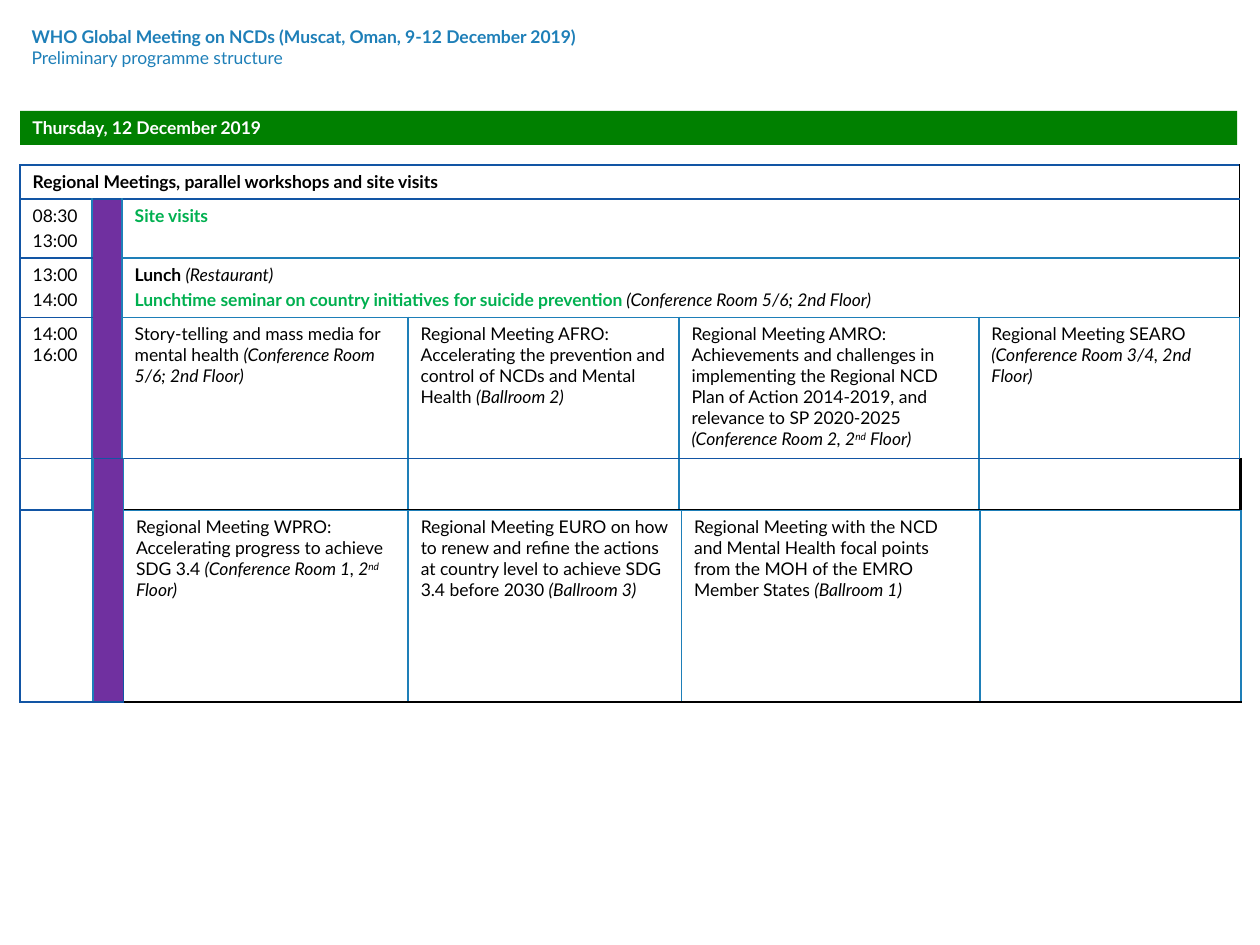
from lxml import etree
from pptx import Presentation
from pptx.dml.color import RGBColor
from pptx.enum.shapes import MSO_SHAPE
from pptx.enum.text import MSO_ANCHOR, MSO_AUTO_SIZE, PP_ALIGN
from pptx.oxml.ns import qn
from pptx.util import Inches, Pt

RECTANGLE = MSO_SHAPE.RECTANGLE
TOP, MIDDLE = MSO_ANCHOR.TOP, MSO_ANCHOR.MIDDLE
LEFT = PP_ALIGN.LEFT
NO_AUTOFIT = MSO_AUTO_SIZE.NONE
FONT, SIZE = "Lato", 10
BLUE, NAVY, BLACK, WHITE = "1E7FB8", "1255A4", "000000", "FFFFFF"
BANNER_GREEN, TEXT_GREEN, PURPLE = "008000", "00B050", "7030A0"
PLAIN_STYLE = "{2D5ABB26-0587-4C30-8999-92F81FD0307C}"

# Content: a paragraph is a list of (text, style) spans
# Styles: b bold, i italic, g green, s superscript
HEADING = [
    [("WHO Global Meeting on NCDs (Muscat, Oman, 9-12 December 2019)", "b")],
    [("Preliminary programme structure", "")],
]
BANNER = [[("Thursday, 12 December 2019", "b")]]


def session(topic, *room):
    return [[(topic, "")] + [(text, "is" if text == "nd" else "i") for text in room]]


def hours(*times):
    return [[(time, "")] for time in times]


# Cells: row, column, row span, column span, borders, paragraphs, fill
# Borders run left, top, right, bottom: N navy, B blue, K black, - none
MORNING = {
    "at": (0.16, 1.31),
    "columns": [0.57, 0.24, 2.27, 2.15, 2.38, 2.07],
    "rows": [0.27, 0.47, 0.47, 1.12, 0.41],
    "cells": [
        (0, 0, 1, 6, "NNKN",
         [[("Regional Meetings, parallel workshops and site visits", "b")]], None),
        (1, 0, 1, 1, "NNBN", hours("08:30", "13:00"), None),
        (1, 1, 4, 1, "BNBN", [], PURPLE),
        (1, 2, 1, 4, "BNKB", [[("Site visits", "bg")]], None),
        (2, 0, 1, 1, "NNBN", hours("13:00", "14:00"), None),
        (2, 2, 1, 4, "BBKB", [
            [("Lunch ", "b"), ("(Restaurant)", "i")],
            [("Lunchtime seminar on country initiatives for suicide prevention ", "bg"),
             ("(Conference Room 5/6; 2nd Floor)", "i")],
        ], None),
        (3, 0, 2, 1, "NNBN", hours("14:00 16:00"), None),
        (3, 2, 1, 1, "BBB-", session(
            "Story-telling and mass media for mental health ",
            "(Conference Room 5/6; 2nd Floor)"), None),
        (3, 3, 1, 1, "BBB-", session(
            "Regional Meeting AFRO: Accelerating the prevention and control of "
            "NCDs and Mental Health ", "(Ballroom 2)"), None),
        (3, 4, 1, 1, "BBB-", session(
            "Regional Meeting AMRO: Achievements and challenges in implementing "
            "the Regional NCD Plan of Action 2014-2019, and relevance to "
            "SP 2020-2025 ", "(Conference Room 2, 2", "nd", " Floor)"), None),
        (3, 5, 1, 1, "BBB-", session(
            "Regional Meeting SEARO ", "(Conference Room 3/4, 2nd Floor)"), None),
        (4, 2, 1, 1, "N-BK", [], None),
        (4, 3, 1, 1, "B-BK", [], None),
        (4, 4, 1, 1, "B-BK", [], None),
        (4, 5, 1, 1, "B-KK", [], None),
    ],
}
AFTERNOON = {
    "at": (0.16, 3.64),
    "columns": [0.58, 0.24, 2.26, 2.17, 2.37, 2.07],
    "rows": [0.41, 1.11, 0.41],
    "cells": [
        (0, 0, 3, 1, "NNBN", [], None),
        (0, 1, 3, 1, "BNBN", [], PURPLE),
        (0, 2, 1, 4, "BNKB", [], None),
        (1, 2, 1, 1, "BBB-", session(
            "Regional Meeting WPRO: Accelerating progress to achieve SDG 3.4 ",
            "(Conference Room 1, 2", "nd", " Floor)"), None),
        (1, 3, 1, 1, "BBB-", session(
            "Regional Meeting EURO on how to renew and refine the actions at "
            "country level to achieve SDG 3.4 before 2030 ", "(Ballroom 3)"), None),
        (1, 4, 1, 1, "BBB-", session(
            "Regional Meeting with the NCD and Mental Health focal points from "
            "the MOH of the EMRO Member States ", "(Ballroom 1)"), None),
        (1, 5, 2, 1, "BBBK", [], None),
        (2, 2, 1, 1, "N-BK", [], None),
        (2, 3, 1, 1, "B-BK", [], None),
        (2, 4, 1, 1, "B-BK", [], None),
    ],
}
BORDER_COLOURS = {"N": NAVY, "B": BLUE, "K": BLACK}


def colour(hex_string):
    return RGBColor.from_string(hex_string)


def write(frame, paragraphs, ink=BLACK, gap=0):
    frame.word_wrap = True
    for index, spans in enumerate(paragraphs):
        para = frame.paragraphs[0] if index == 0 else frame.add_paragraph()
        para.alignment = LEFT
        para.space_before = Pt(gap if index else 0)
        for text, style in spans:
            span = para.add_run()
            span.text = text
            span.font.name, span.font.size = FONT, Pt(SIZE)
            span.font.bold, span.font.italic = "b" in style, "i" in style
            span.font.color.rgb = colour(TEXT_GREEN if "g" in style else ink)
            if "s" in style:
                span.font._element.set("baseline", "30000")


def set_borders(cell, borders):
    properties = cell._tc.get_or_add_tcPr()
    # The schema wants left, right, top, bottom
    for tag, position in (("lnL", 0), ("lnR", 2), ("lnT", 1), ("lnB", 3)):
        line = etree.SubElement(properties, qn("a:" + tag), w=str(Pt(1)))
        hex_string = BORDER_COLOURS.get(borders[position])
        if hex_string:
            fill = etree.SubElement(line, qn("a:solidFill"))
            etree.SubElement(fill, qn("a:srgbClr"), val=hex_string)
        else:
            etree.SubElement(line, qn("a:noFill"))


def add_schedule(page, schedule):
    columns, rows = schedule["columns"], schedule["rows"]
    left, top = schedule["at"]
    table = page.shapes.add_table(
        len(rows), len(columns), Inches(left), Inches(top),
        Inches(sum(columns)), Inches(sum(rows))).table
    table.first_row = table.horz_banding = False
    table._tbl.tblPr.find(qn("a:tableStyleId")).text = PLAIN_STYLE
    for column, width in zip(table.columns, columns):
        column.width = Inches(width)
    for row, height in zip(table.rows, rows):
        row.height = Inches(height)
    for row, column, down, across, borders, paragraphs, fill in schedule["cells"]:
        cell = table.cell(row, column)
        if down * across > 1:
            cell.merge(table.cell(row + down - 1, column + across - 1))
        # Only the outer edges of a merged block carry a line
        for y in range(down):
            for x in range(across):
                edges = (x == 0, y == 0, x == across - 1, y == down - 1)
                outer = [b if edge else "-" for b, edge in zip(borders, edges)]
                part = table.cell(row + y, column + x)
                set_borders(part, borders if x == y == 0 else outer)
                if fill:
                    part.fill.solid()
                    part.fill.fore_color.rgb = colour(fill)
                else:
                    part.fill.background()
        write(cell.text_frame, paragraphs, gap=2)


def main():
    deck = Presentation()
    deck.slide_width, deck.slide_height = Inches(10), Inches(7.5)
    page = deck.slides.add_slide(deck.slide_layouts[5])

    # Heading
    title = page.shapes.title
    title.left, title.top = Inches(0.15), Inches(0.16)
    title.width, title.height = Inches(8.05), Inches(0.44)
    title.text_frame.auto_size = NO_AUTOFIT
    title.text_frame.vertical_anchor = TOP
    write(title.text_frame, HEADING, ink=BLUE)

    # First table, day banner, second table
    add_schedule(page, MORNING)
    banner = page.shapes.add_shape(
        RECTANGLE, Inches(0.16), Inches(0.88), Inches(9.66), Inches(0.27))
    banner.shadow.inherit = False
    banner.fill.solid()
    banner.fill.fore_color.rgb = colour(BANNER_GREEN)
    banner.line.fill.background()
    banner.text_frame.vertical_anchor = MIDDLE
    write(banner.text_frame, BANNER, ink=WHITE)
    add_schedule(page, AFTERNOON)

    deck.save("out.pptx")


if __name__ == "__main__":
    main()
